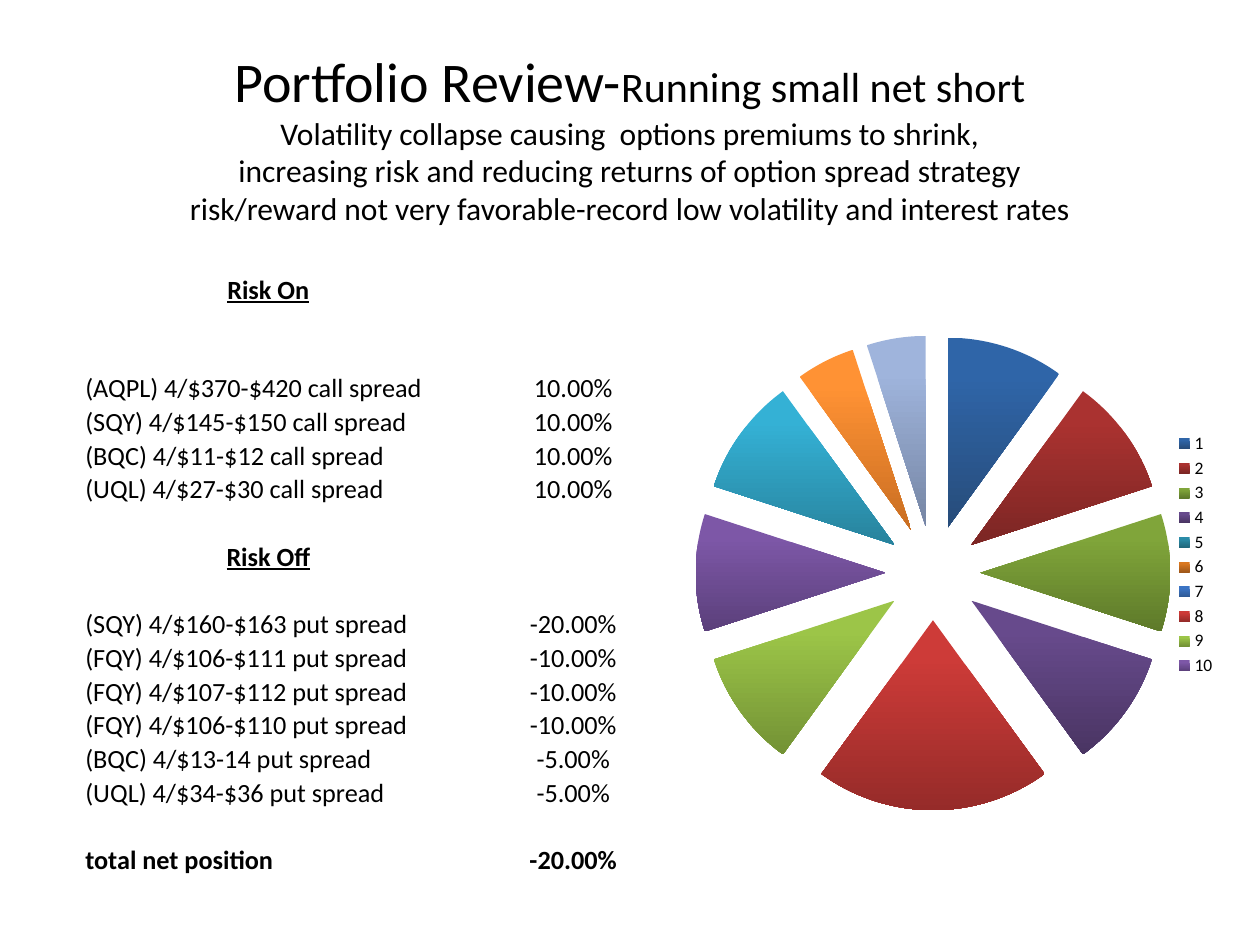
from dataclasses import dataclass

from lxml import etree
from pptx import Presentation
from pptx.chart.data import CategoryChartData
from pptx.dml.color import RGBColor
from pptx.enum.chart import XL_CHART_TYPE, XL_LEGEND_POSITION
from pptx.enum.text import MSO_ANCHOR, PP_ALIGN
from pptx.oxml.ns import qn
from pptx.util import Cm, Pt

PIE = XL_CHART_TYPE.PIE
RIGHT = XL_LEGEND_POSITION.RIGHT
MIDDLE, BOTTOM = MSO_ANCHOR.MIDDLE, MSO_ANCHOR.BOTTOM
LEFT, CENTER = PP_ALIGN.LEFT, PP_ALIGN.CENTER


@dataclass(frozen=True)
class Theme:
    font: str = "Calibri"
    ink: str = "000000"
    title: int = 32
    lead: int = 24
    note: int = 18
    body: int = 15
    legend: int = 10
    # top and bottom colour of each slice
    slices: tuple = (
        ("2F65A8", "274C7A"), ("AA3230", "7C2624"), ("80A53A", "5E7A2A"),
        ("674A8C", "4A3563"), ("2B8CA8", "20687C"), ("D9771F", "A0581A"),
        ("3B74C4", "2F5A96"), ("CD3B38", "962B29"), ("9CC548", "739235"),
        ("7D57A7", "5B407B"), ("34B1D5", "28839D"), ("FF9234", "C96E22"),
        ("9FB4DC", "7686A4"),
    )


THEME = Theme()

HEAD = (("Portfolio Review-", THEME.title), ("Running small net short", THEME.lead))
NOTES = (
    "Volatility collapse causing  options premiums to shrink,",
    "increasing risk and reducing returns of option spread strategy",
    "risk/reward not very favorable-record low volatility and interest rates",
)
GAP = ("", "")
ROWS = (
    ("Risk On", ""),
    GAP,
    ("(AQPL) 4/$370-$420 call spread", "10.00%"),
    ("(SQY) 4/$145-$150 call spread", "10.00%"),
    ("(BQC) 4/$11-$12 call spread", "10.00%"),
    ("(UQL) 4/$27-$30 call spread", "10.00%"),
    GAP,
    ("Risk Off", ""),
    GAP,
    ("(SQY) 4/$160-$163 put spread", "-20.00%"),
    ("(FQY) 4/$106-$111 put spread", "-10.00%"),
    ("(FQY) 4/$107-$112 put spread", "-10.00%"),
    ("(FQY) 4/$106-$110 put spread", "-10.00%"),
    ("(BQC) 4/$13-14 put spread", "-5.00%"),
    ("(UQL) 4/$34-$36 put spread", "-5.00%"),
    GAP,
    ("total net position", "-20.00%"),
)
TALL = 2
VALUES = (10, 10, 10, 10, None, None, None, -20, -10, -10, -10, -5, -5)
SHOWN = 10  # legend entries kept


def style(font, size, bold=False, line=False):
    font.name = THEME.font
    font.size = Pt(size)
    font.bold = bold
    font.underline = line
    font.color.rgb = RGBColor.from_string(THEME.ink)


def add_run(para, text, size, bold=False, line=False):
    run = para.add_run()
    run.text = text
    style(run.font, size, bold, line)


def add_title(slide):
    box = slide.shapes.add_textbox(Cm(1.27), Cm(0.64), Cm(22.86), Cm(4.23))
    frame = box.text_frame
    frame.word_wrap = True
    frame.vertical_anchor = MIDDLE
    para = frame.paragraphs[0]
    para.alignment = CENTER
    for text, size in HEAD:
        add_run(para, text, size)
    for text in NOTES:
        para.add_line_break()
        add_run(para, text, THEME.note)


def add_node(parent, tag, **attrs):
    return etree.SubElement(parent, qn(tag), **attrs)


def place_plot(chart, **parts):
    """Fix the inner plot area as fractions of the chart."""
    area = chart._chartSpace.chart.plotArea
    for old in area.findall(qn("c:layout")):
        area.remove(old)
    layout = etree.Element(qn("c:layout"))
    manual = add_node(layout, "c:manualLayout")
    add_node(manual, "c:layoutTarget", val="inner")
    for key in ("xMode", "yMode"):
        add_node(manual, f"c:{key}", val="edge")
    for key, val in parts.items():
        add_node(manual, f"c:{key}", val=str(val))
    area.insert(0, layout)


def explode(series, share):
    node = etree.Element(qn("c:explosion"), val=str(share))
    series._element.find(qn("c:tx")).addnext(node)


def trim_legend(legend):
    """Hide the entries after the last one shown."""
    for place, index in enumerate(range(SHOWN, len(VALUES)), start=1):
        entry = etree.Element(qn("c:legendEntry"))
        add_node(entry, "c:idx", val=str(index))
        add_node(entry, "c:delete", val="1")
        legend._element.insert(place, entry)


def paint(point, colors):
    fill = point.format.fill
    fill.gradient()
    fill.gradient_angle = 270
    for stop, color, pos in zip(fill.gradient_stops, colors, (0.2, 1)):
        stop.color.rgb = RGBColor.from_string(color)
        stop.position = pos
    point.format.line.fill.background()


def add_pie(slide):
    data = CategoryChartData()
    data.categories = [str(n) for n in range(1, len(VALUES) + 1)]
    data.add_series("Series 1", VALUES)
    chart = slide.shapes.add_chart(
        PIE, Cm(10.59), Cm(5.92), Cm(14.17), Cm(10.52), data).chart
    chart.has_title = False
    style(chart.font, THEME.legend)
    chart.has_legend = True
    chart.legend.position = RIGHT
    chart.legend.include_in_layout = False
    trim_legend(chart.legend)
    place_plot(chart, x=0.19, y=0.08, w=0.78, h=0.91)
    plot = chart.plots[0]
    plot.vary_by_categories = True
    series = plot.series[0]
    explode(series, 25)
    for index, colors in enumerate(THEME.slices):
        paint(series.points[index], colors)


def fill_cell(cell, text, align, bold, line):
    cell.fill.background()
    cell.vertical_anchor = BOTTOM
    cell.margin_left = cell.margin_right = cell.margin_top = Cm(0.02)
    cell.margin_bottom = 0
    para = cell.text_frame.paragraphs[0]
    para.alignment = align
    if text:
        add_run(para, text, THEME.body, bold, line)
    else:
        add_node(para._p, "a:endParaRPr", sz=str(THEME.body * 100))


def add_book(slide):
    """Add the table of positions."""
    table = slide.shapes.add_table(
        len(ROWS), 2, Cm(1.7), Cm(5.5), Cm(12.29), Cm(12.18)).table
    table.first_row = table.horz_banding = False
    table.columns[0].width = Cm(7.42)
    table.columns[1].width = Cm(4.87)
    for index, (name, share) in enumerate(ROWS):
        table.rows[index].height = Cm(1.3 if index == TALL else 0.68)
        head = bool(name) and not share
        bold = head or index == len(ROWS) - 1
        fill_cell(table.cell(index, 0), name, CENTER if head else LEFT, bold, head)
        fill_cell(table.cell(index, 1), share, CENTER, bold, False)


def main():
    deck = Presentation()
    deck.slide_width, deck.slide_height = Cm(25.4), Cm(19.05)
    slide = deck.slides.add_slide(deck.slide_layouts[6])
    add_title(slide)
    add_pie(slide)
    add_book(slide)
    deck.save("out.pptx")


if __name__ == "__main__":
    main()
